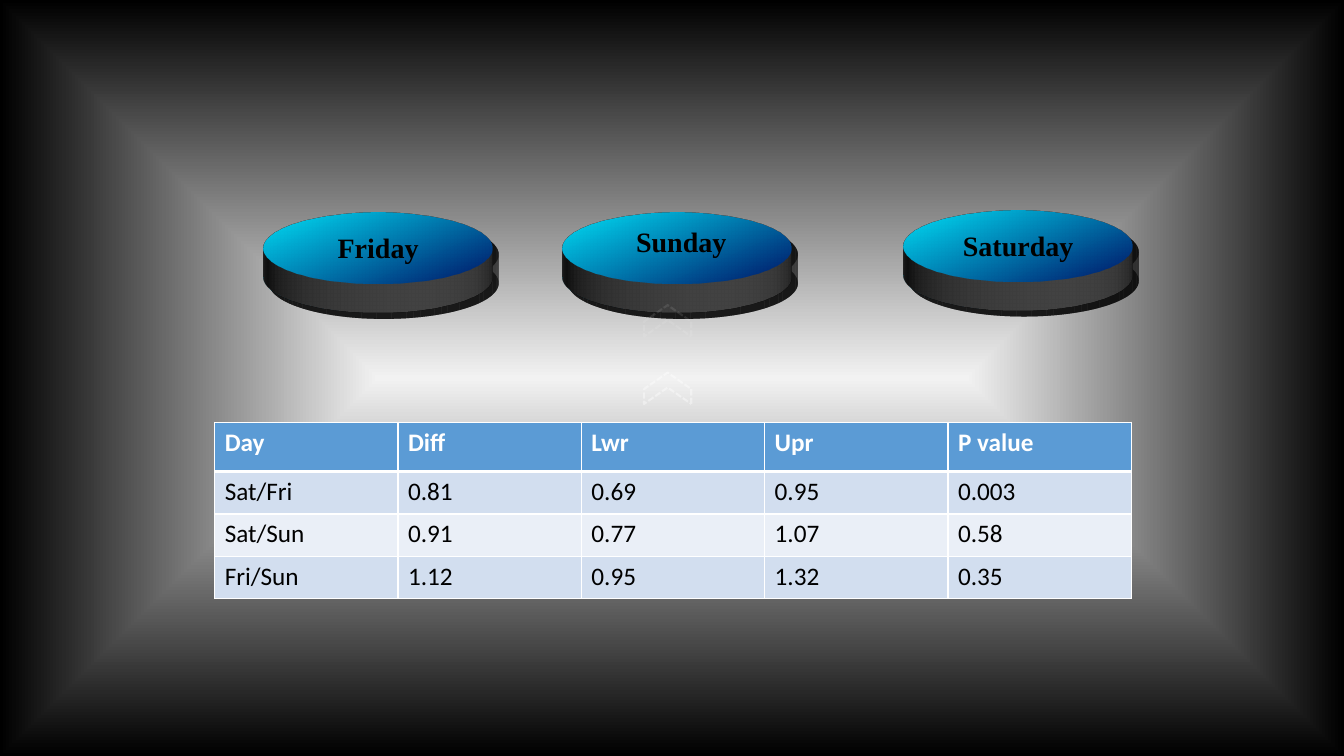
"""Build the slide comparing three weekdays with a table of differences."""
from dataclasses import dataclass

from lxml import etree
from pptx import Presentation
from pptx import util as u
from pptx.dml import color as dml_color
from pptx.dml.fill import FillFormat
from pptx.enum import dml, shapes, text
from pptx.oxml import parse_xml
from pptx.oxml.ns import nsdecls, qn
from pptx.shapes.autoshape import Shape
from pptx.slide import Slide
from pptx.text.text import Font

COLORS = {
    "white": "FFFFFF", "black": "000000", "glow": "F2F2F2",
    "disc_light": "00DFF6", "disc_dark": "002774", "disc_side": "808080",
    "header": "5B9BD5", "band": "D2DEEF", "plain": "EAEFF7",
}
LABEL_FONT = {"name": "Times New Roman", "size": u.Pt(20), "bold": True}
CELL_FONT = {"name": "Calibri", "size": u.Pt(18)}
DISC_WIDTH, DISC_HEIGHT = 5.79, 4.19
LABEL_WIDTH, LABEL_HEIGHT = 4.32, 1.12
RESULTS = [
    ["Day", "Diff", "Lwr", "Upr", "P value"],
    ["Sat/Fri", "0.81", "0.69", "0.95", "0.003"],
    ["Sat/Sun", "0.91", "0.77", "1.07", "0.58"],
    ["Fri/Sun", "1.12", "0.95", "1.32", "0.35"],
]
ROW_FILLS = ["header", "band", "plain", "band"]
ROW_HEIGHTS = [1.24, 1.07, 1.07, 1.07]
COLUMN_WIDTH = 4.62


@dataclass
class Day:
    name: str
    disc_left: float
    disc_top: float
    label_left: float
    label_top: float


@dataclass
class Chevron:
    top: float
    opacity: int


DAYS = [
    Day("Friday", 6.63, 4.17, 7.37, 5.69),
    Day("Sunday", 14.17, 4.17, 15.01, 5.54),
    Day("Saturday", 22.76, 4.11, 23.5, 5.64),
]
CHEVRONS = [Chevron(9.19, 40), Chevron(7.49, 10)]


def rgb(name: str) -> dml_color.RGBColor:
    return dml_color.RGBColor.from_string(COLORS[name])


def xml(markup: str) -> etree.ElementBase:
    return parse_xml(markup.replace(">", f" {nsdecls('a')}>", 1))


def format_font(font: Font, values: dict, color: str) -> None:
    for attribute, value in values.items():
        setattr(font, attribute, value)
    font.color.rgb = rgb(color)


def set_gradient(fill: FillFormat, start: str, end: str, end_position: float) -> None:
    fill.gradient()
    positions = ((start, 0), (end, end_position))
    for stop, (name, position) in zip(fill.gradient_stops, positions):
        stop.color.rgb = rgb(name)
        stop.position = position


def paint_background(slide: Slide) -> None:
    set_gradient(slide.background.fill, "glow", "black", 1)
    gradient = slide.element.find(".//" + qn("a:gradFill"))
    gradient.remove(gradient.find(qn("a:lin")))
    gradient.append(xml(
        '<a:path path="shape"><a:fillToRect l="50000" t="50000" r="50000" b="50000"/></a:path>'))


def extrude(disc: Shape) -> None:
    properties = disc.element.spPr
    properties.find(qn("a:effectLst")).append(xml(
        '<a:outerShdw blurRad="127000" dist="76200" dir="2700000" algn="tl" rotWithShape="0">'
        f'<a:srgbClr val="{COLORS["black"]}"><a:alpha val="40000"/></a:srgbClr></a:outerShdw>'))
    properties.append(xml(
        '<a:scene3d><a:camera prst="orthographicFront">'
        '<a:rot lat="17730000" lon="0" rev="0"/></a:camera>'
        '<a:lightRig rig="threePt" dir="t"/></a:scene3d>'))
    properties.append(xml(
        '<a:sp3d extrusionH="288000"><a:extrusionClr>'
        f'<a:srgbClr val="{COLORS["disc_side"]}"/></a:extrusionClr></a:sp3d>'))


def draw_day(slide: Slide, day: Day) -> None:
    disc = slide.shapes.add_shape(
        shapes.MSO_SHAPE.OVAL, u.Cm(day.disc_left), u.Cm(day.disc_top),
        u.Cm(DISC_WIDTH), u.Cm(DISC_HEIGHT))
    disc.shadow.inherit = False
    set_gradient(disc.fill, "disc_light", "disc_dark", 0.9)
    disc.fill.gradient_angle = 315
    disc.line.color.rgb = rgb("white")
    disc.line.width = u.Pt(1)
    extrude(disc)
    label = slide.shapes.add_textbox(
        u.Cm(day.label_left), u.Cm(day.label_top), u.Cm(LABEL_WIDTH), u.Cm(LABEL_HEIGHT))
    label.text_frame.word_wrap = True
    label.text_frame.auto_size = text.MSO_AUTO_SIZE.SHAPE_TO_FIT_TEXT
    paragraph = label.text_frame.paragraphs[0]
    paragraph.text = day.name
    paragraph.alignment = text.PP_ALIGN.CENTER
    format_font(paragraph.font, LABEL_FONT, "black")


def draw_chevron(slide: Slide, chevron: Chevron) -> None:
    arrow = slide.shapes.add_shape(
        shapes.MSO_SHAPE.CHEVRON, u.Cm(16.43), u.Cm(chevron.top), u.Cm(0.79), u.Cm(1.19))
    arrow.shadow.inherit = False
    arrow.adjustments[0] = 0.525
    arrow.rotation = 270
    arrow.element.spPr.find(qn("a:xfrm")).set("flipV", "1")
    arrow.fill.background()
    arrow.line.color.rgb = rgb("white")
    arrow.line.width = u.Pt(1.5)
    arrow.line.dash_style = dml.MSO_LINE.SQUARE_DOT
    arrow.element.spPr.find(f"{qn('a:ln')}//{qn('a:srgbClr')}").append(
        xml(f'<a:alpha val="{chevron.opacity * 1000}"></a:alpha>'))


def draw_results(slide: Slide) -> None:
    columns = len(RESULTS[0])
    table = slide.shapes.add_table(
        len(RESULTS), columns, u.Cm(5.41), u.Cm(10.64),
        u.Cm(columns * COLUMN_WIDTH), u.Cm(sum(ROW_HEIGHTS))).table
    for column in table.columns:
        column.width = u.Cm(COLUMN_WIDTH)
    for index, values in enumerate(RESULTS):
        is_header = index == 0
        table.rows[index].height = u.Cm(ROW_HEIGHTS[index])
        edges = {"L": 1, "R": 1, "T": 3 if index == 1 else 1, "B": 3 if is_header else 1}
        for cell, value in zip(table.rows[index].cells, values):
            cell.text = value
            font = cell.text_frame.paragraphs[0].font
            format_font(font, {**CELL_FONT, "bold": is_header},
                        "white" if is_header else "black")
            for side, points in edges.items():
                cell._tc.get_or_add_tcPr().append(xml(
                    f'<a:ln{side} w="{u.Pt(points)}"><a:solidFill>'
                    f'<a:srgbClr val="{COLORS["white"]}"/></a:solidFill></a:ln{side}>'))
            cell.fill.solid()
            cell.fill.fore_color.rgb = rgb(ROW_FILLS[index])


def main() -> None:
    presentation = Presentation()
    presentation.slide_width = u.Cm(33.87)
    presentation.slide_height = u.Cm(19.05)
    slide = presentation.slides.add_slide(presentation.slide_layouts[6])
    paint_background(slide)
    for day in DAYS:
        draw_day(slide, day)
    for chevron in CHEVRONS:
        draw_chevron(slide, chevron)
    draw_results(slide)
    presentation.save("out.pptx")


if __name__ == "__main__":
    main()
